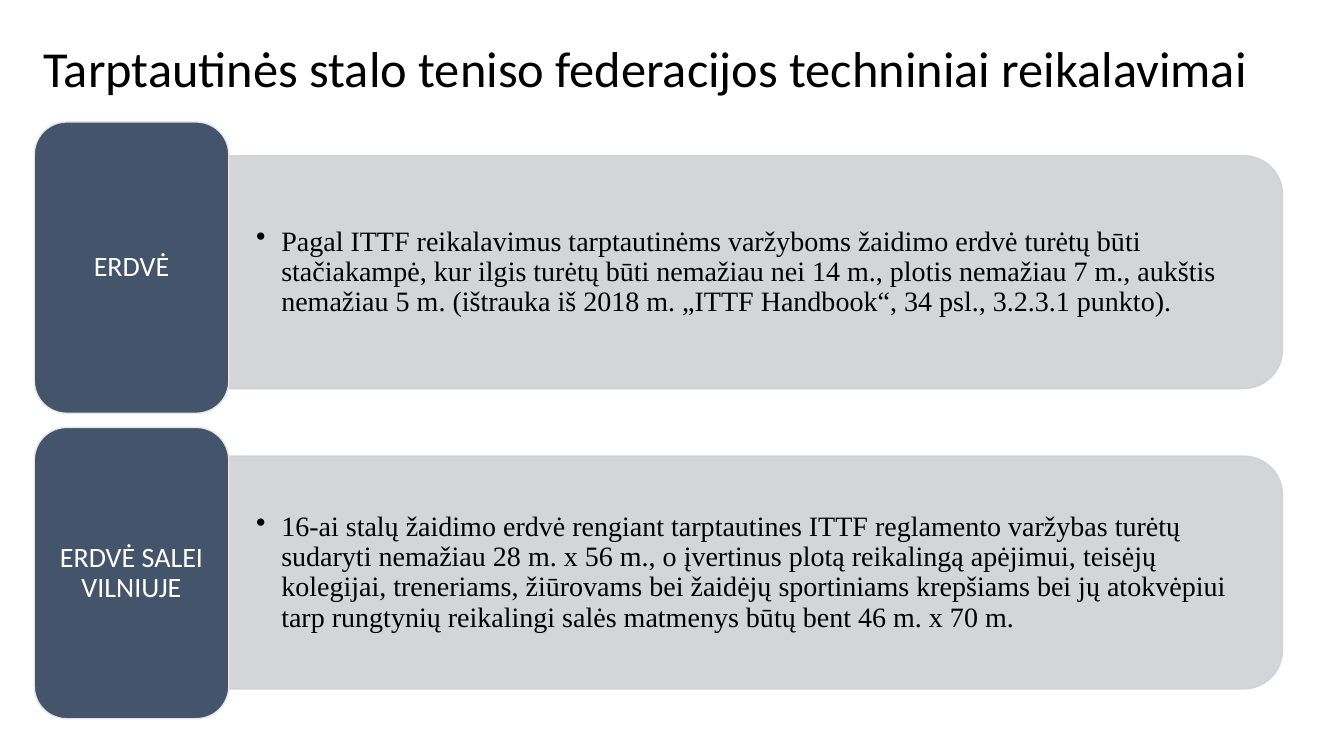
from pptx import Presentation
from pptx.dml.color import RGBColor
from pptx.enum.shapes import MSO_SHAPE as Shape
from pptx.enum.text import MSO_ANCHOR as Anchor, PP_ALIGN as Align
from pptx.oxml.ns import qn
from pptx.util import Inches, Pt
from lxml.etree import SubElement

TITLE = "Tarptautinės stalo teniso federacijos techniniai reikalavimai"
# label, body, top of label, middle of panel
ROWS = [
    ("ERDVĖ",
     "Pagal ITTF reikalavimus tarptautinėms varžyboms žaidimo erdvė turėtų būti "
     "stačiakampė, kur ilgis turėtų būti nemažiau nei 14 m., plotis nemažiau 7 m., "
     "aukštis nemažiau 5 m. (ištrauka iš 2018 m. „ITTF Handbook“, 34 psl., "
     "3.2.3.1 punkto).", 1.21, 2.7),
    ("ERDVĖ SALEI VILNIUJE",
     "16-ai stalų žaidimo erdvė rengiant tarptautines ITTF reglamento varžybas "
     "turėtų sudaryti nemažiau 28 m. x 56 m., o įvertinus plotą reikalingą "
     "apėjimui, teisėjų kolegijai, treneriams, žiūrovams bei žaidėjų sportiniams "
     "krepšiams bei jų atokvėpiui tarp rungtynių reikalingi salės matmenys būtų "
     "bent 46 m. x 70 m.", 4.24, 5.68),
]
LEFT, LABEL_W, LABEL_H = 0.34, 1.93, 2.89
PANEL_X, PANEL_W, PANEL_H = LEFT + LABEL_W, 10.45, 2.31
TEXT_W, TEXT_H = 10.33, 2.09


def rgb(code):
    return RGBColor.from_string(code)


def write(shape, text, font, size, color, align, inset):
    frame = shape.text_frame
    frame.text = text
    frame.word_wrap = True
    frame.vertical_anchor = Anchor.MIDDLE
    frame.margin_left = frame.margin_right = Inches(inset[0])
    frame.margin_top = frame.margin_bottom = Inches(inset[1])
    para = frame.paragraphs[0]
    para.alignment, para.line_spacing = align, 0.9
    style = para.runs[0].font
    style.name, style.size, style.color.rgb = font, Pt(size), rgb(color)
    return para


def block(kind, x, y, w, h, fill, line):
    shape = slide.shapes.add_shape(kind, *map(Inches, (x, y, w, h)))
    shape.shadow.inherit = False
    shape.fill.solid()
    shape.fill.fore_color.rgb = rgb(fill)
    shape.line.color.rgb = rgb(line)
    shape.line.width = Pt(1)
    return shape


def add_panel(mid):
    """Draw the grey panel, turned so that its round corners face right."""
    x = PANEL_X + (PANEL_W - PANEL_H) / 2
    panel = block(Shape.ROUND_2_SAME_RECTANGLE, x, mid - PANEL_W / 2,
                  PANEL_H, PANEL_W, "CFD1D4", "CFD1D4")
    panel.rotation = 90
    for color in panel.element.spPr.iter(qn("a:srgbClr")):
        SubElement(color, qn("a:alpha"), val="90000")


def add_body(text, mid):
    box = slide.shapes.add_textbox(*map(Inches, (PANEL_X, mid - TEXT_H / 2, TEXT_W, TEXT_H)))
    para = write(box, text, "Times New Roman", 20, "000000", Align.LEFT, (0.27, 0.14))
    props = para._p.get_or_add_pPr()
    props.set("marL", str(Inches(0.25)))
    props.set("indent", str(-Inches(0.25)))
    SubElement(props, qn("a:buChar"), char="•")


prs = Presentation()
prs.slide_width, prs.slide_height = Inches(13.33), Inches(7.5)
slide = prs.slides.add_slide(prs.slide_layouts[5])

title = slide.shapes.title
title.left, title.top, title.width, title.height = map(Inches, (0.33, 0.21, 12.72, 1))
write(title, TITLE, "Calibri", 36, "000000", Align.LEFT, (0.1, 0.05))

for name, body, top, mid in ROWS:
    add_panel(mid)
    add_body(body, mid)
    label = block(Shape.ROUNDED_RECTANGLE, LEFT, top, LABEL_W, LABEL_H, "44546A", "E7E6E6")
    write(label, name, "Calibri", 20, "FFFFFF", Align.CENTER, (0.08, 0.04))

prs.save("out.pptx")
